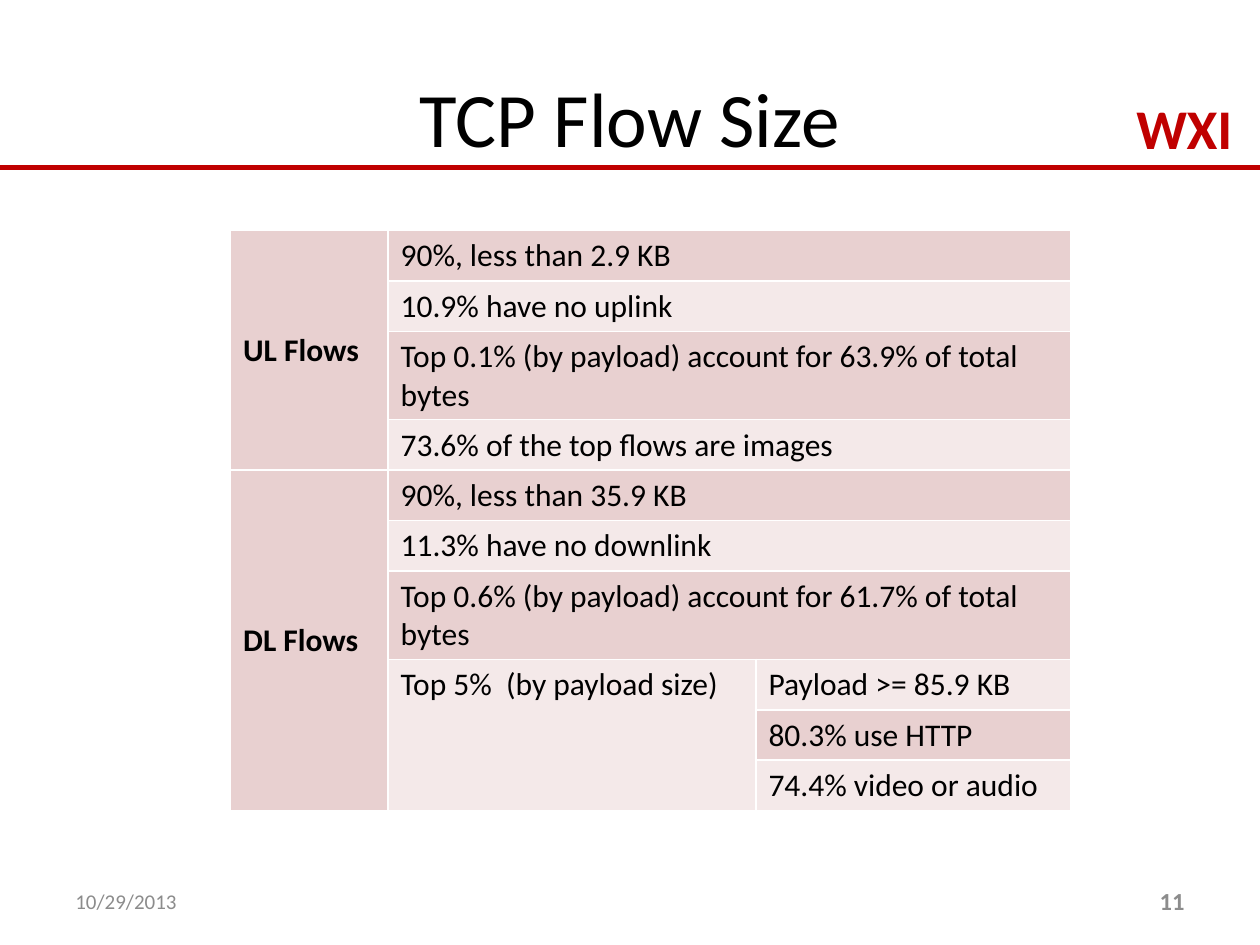
"""Build the TCP flow size slide with its merged summary table."""
from lxml import etree
from pptx import Presentation
from pptx.dml.color import RGBColor
from pptx.enum import shapes, text
from pptx.oxml import ns
from pptx.util import Inches, Pt

FONT = "Calibri"
RED, GRAY, BLACK, WHITE = "C00000", "8C8C8C", "000000", "FFFFFF"
BANDS = ("E8D0D0", "F4E9E9")
LEFT, CENTER, RIGHT = text.PP_ALIGN.LEFT, text.PP_ALIGN.CENTER, text.PP_ALIGN.RIGHT
TOP, MIDDLE = text.MSO_ANCHOR.TOP, text.MSO_ANCHOR.MIDDLE

LABELS = [
    ("WXI", (8.92, 0.69, 0.97, 0.64), 32, RED, True, LEFT, TOP),
    ("TCP Flow Size", (0.5, 0.3, 9, 1.25), 44, BLACK, False, CENTER, MIDDLE),
    ("10/29/2013", (0.5, 6.95, 2.33, 0.4), 12, GRAY, False, LEFT, MIDDLE),
    ("11", (7.17, 6.95, 2.33, 0.4), 14, GRAY, True, RIGHT, MIDDLE),
]
RULE_Y = 1.33
TABLE_LEFT, TABLE_TOP, ROW_HEIGHT = 1.83, 1.83, 0.4
COLUMN_WIDTHS = (1.25, 2.92, 2.5)
ROW_COUNT = 10
CELLS = [
    (0, 0, 4, 1, "UL Flows"),
    (0, 1, 1, 2, "90%, less than 2.9 KB"),
    (1, 1, 1, 2, "10.9% have no uplink"),
    (2, 1, 1, 2, "Top 0.1% (by payload) account for 63.9% of total bytes"),
    (3, 1, 1, 2, "73.6% of the top flows are images"),
    (4, 0, 6, 1, "DL Flows"),
    (4, 1, 1, 2, "90%, less than 35.9 KB"),
    (5, 1, 1, 2, "11.3% have no downlink"),
    (6, 1, 1, 2, "Top 0.6% (by payload) account for 61.7% of total bytes"),
    (7, 1, 3, 1, "Top 5%  (by payload size)"),
    (7, 2, 1, 1, "Payload >= 85.9 KB"),
    (8, 2, 1, 1, "80.3% use HTTP"),
    (9, 2, 1, 1, "74.4% video or audio"),
]


def color(value):
    return RGBColor.from_string(value)


def write(frame, words, size, ink, bold, align=LEFT):
    frame.text = words
    para = frame.paragraphs[0]
    para.alignment = align
    for span in para.runs:
        span.font.name = FONT
        span.font.size = Pt(size)
        span.font.bold = bold
        span.font.color.rgb = color(ink)


def add_label(page, words, place, size, ink, bold, align, anchor):
    frame = page.shapes.add_textbox(*map(Inches, place)).text_frame
    frame.word_wrap = words != LABELS[0][0]
    frame.vertical_anchor = anchor
    write(frame, words, size, ink, bold, align)


def add_rule(page, width):
    y = Inches(RULE_Y)
    rule = page.shapes.add_connector(shapes.MSO_CONNECTOR.STRAIGHT, 0, y, width, y)
    rule.line.color.rgb = color(RED)
    rule.line.width = Pt(3.25)
    etree.SubElement(rule._element.spPr, ns.qn("a:effectLst"))


def style_cell(cell, fill):
    properties = cell._tc.get_or_add_tcPr()
    for side in ("lnL", "lnR", "lnT", "lnB"):
        border = etree.SubElement(properties, ns.qn(f"a:{side}"), w=str(Pt(1)))
        paint = etree.SubElement(border, ns.qn("a:solidFill"))
        etree.SubElement(paint, ns.qn("a:srgbClr"), val=WHITE)
    cell.fill.solid()
    cell.fill.fore_color.rgb = color(fill)


def add_flow_table(page):
    table = page.shapes.add_table(
        ROW_COUNT, len(COLUMN_WIDTHS), Inches(TABLE_LEFT), Inches(TABLE_TOP),
        Inches(sum(COLUMN_WIDTHS)), Inches(ROW_HEIGHT * ROW_COUNT)).table
    table.first_row = table.horz_banding = False
    for column, width in zip(table.columns, COLUMN_WIDTHS):
        column.width = Inches(width)
    for row in table.rows:
        row.height = Inches(ROW_HEIGHT)
    for row, column, height, width, words in CELLS:
        cell = table.cell(row, column)
        for r in range(row, row + height):
            for c in range(column, column + width):
                style_cell(table.cell(r, c), BANDS[row % 2])
        if height * width > 1:
            cell.merge(table.cell(row + height - 1, column + width - 1))
        heading = column == 0
        cell.vertical_anchor = MIDDLE if heading else TOP
        write(cell.text_frame, words, 18, BLACK, heading)


def main():
    deck = Presentation()
    deck.slide_width, deck.slide_height = Inches(10), Inches(7.5)
    page = deck.slides.add_slide(deck.slide_layouts[6])
    add_rule(page, deck.slide_width)
    for label in LABELS:
        add_label(page, *label)
    add_flow_table(page)
    deck.save("out.pptx")


if __name__ == "__main__":
    main()
